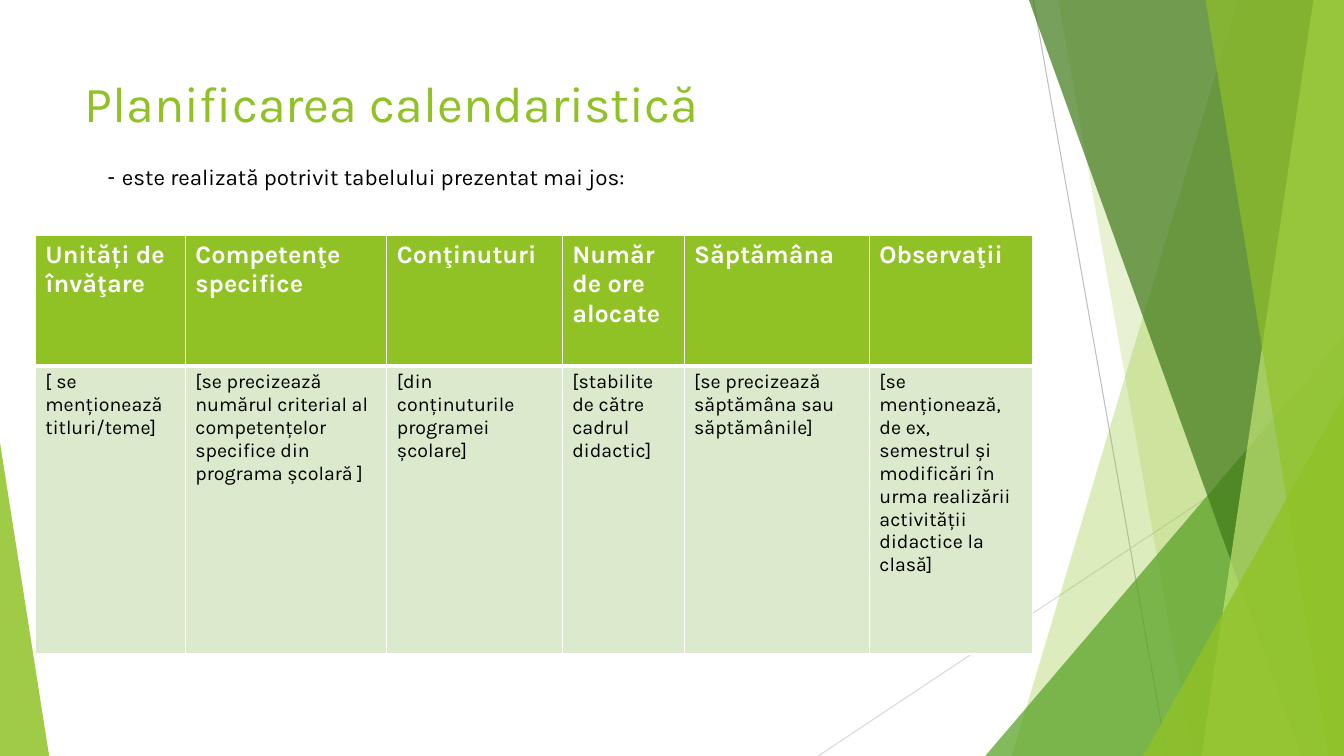
from dataclasses import dataclass

from lxml import etree
from pptx import Presentation
from pptx import util as u
from pptx.dml.color import RGBColor
from pptx.enum import shapes, text
from pptx.oxml import ns


@dataclass(frozen=True)
class Theme:
    """Colours, font and type sizes of the deck."""
    font: str = "Karla"
    lime: str = "90C226"
    pale_lime: str = "C0E474"
    green: str = "54A021"
    forest: str = "3F7819"
    mint: str = "DBE9CD"
    white: str = "FFFFFF"
    black: str = "000000"
    grey: str = "BFBFBF"
    light_grey: str = "D9D9D9"
    title: int = 36
    header: int = 18
    lead: int = 16
    cell: int = 14


@dataclass(frozen=True)
class Box:
    """A region in centimetres."""
    left: float
    top: float
    width: float
    height: float

    def lengths(self):
        """Return the four measures as lengths."""
        return [u.Cm(n) for n in (self.left, self.top, self.width, self.height)]


THEME = Theme()
PAGE = Box(0, 0, 33.87, 19.05)
COLUMNS = [
    (3.78, ["Unități de învăţare"], "[ se menționează titluri/teme]"),
    (5.08, ["Competenţe specifice"],
     "[se precizează numărul criterial al competențelor specifice din programa școlară ]"),
    (4.42, ["Conţinuturi"], "[din conținuturile programei școlare]"),
    (3.07, ["Număr de ore", "alocate"], "[stabilite de către cadrul didactic]"),
    (4.67, ["Săptămâna"], "[se precizează săptămâna sau săptămânile]"),
    (4.11, ["Observaţii"],
     "[se menționează, de ex, semestrul și modificări în urma realizării "
     "activității didactice la clasă]"),
]
ROW_HEIGHTS = (3.3, 7.26)


def add_xml(parent, tag, **attributes):
    """Append a drawing element and return it."""
    return etree.SubElement(parent, ns.qn(tag), attributes)


def style_paragraph(para, size, colour, bold=False):
    """Format every run of a paragraph alike."""
    para.font.name = THEME.font
    para.font.size = u.Pt(size)
    para.font.bold = bold
    para.font.color.rgb = RGBColor.from_string(colour)
    para.alignment = text.PP_ALIGN.LEFT
    para.space_before = u.Pt(0)


def paint(shape, colour, opacity):
    """Give a shape a flat translucent fill."""
    shape.shadow.inherit = False
    shape.line.fill.background()
    shape.fill.solid()
    shape.fill.fore_color.rgb = RGBColor.from_string(colour)
    add_xml(shape.element.xpath(".//a:solidFill/a:srgbClr")[0], "a:alpha",
            val=str(opacity * 1000))


def add_thin_line(page, start, end, colour):
    """Draw a hairline between two points."""
    line = page.shapes.add_connector(
        shapes.MSO_CONNECTOR.STRAIGHT, *(u.Cm(n) for n in (*start, *end)))
    line.line.width = u.Pt(0.75)
    line.line.color.rgb = RGBColor.from_string(colour)
    add_xml(line.element.spPr, "a:effectLst")


def add_band(page, box, top_x, bottom_x, colour, opacity):
    """Fill the area from a slanted edge to the right side of the box."""
    right, bottom = box.left + box.width, box.top + box.height
    corners = [(right, box.top), (right, bottom), (box.left + bottom_x, bottom)]
    builder = page.shapes.build_freeform(u.Cm(box.left + top_x), u.Cm(box.top))
    builder.add_line_segments([(u.Cm(x), u.Cm(y)) for x, y in corners])
    paint(builder.convert_to_shape(), colour, opacity)


def add_corner(page, box, width, height, on_right, colour, opacity):
    """Place a right triangle in a bottom corner of the box."""
    left = box.left + (box.width - width if on_right else 0)
    place = Box(left, box.top + box.height - height, width, height)
    corner = page.shapes.add_shape(
        shapes.MSO_SHAPE.ISOSCELES_TRIANGLE, *place.lengths())
    corner.adjustments[0] = 1 if on_right else 0
    paint(corner, colour, opacity)


def add_facets(page, box):
    """Layer the green facets along the sides of the box."""
    right, bottom = box.left + box.width, box.top + box.height
    add_thin_line(page, (box.left + 26.04, box.top), (box.left + 29.41, bottom), THEME.grey)
    add_thin_line(page, (right, box.top + 10.24), (box.left + 20.62, bottom), THEME.light_grey)
    add_band(page, box, 31.19, 25.5, THEME.lime, 30)
    add_band(page, box, 26.67, 30.05, THEME.lime, 20)
    add_corner(page, box, 9.04, 10.59, True, THEME.green, 72)
    add_band(page, box, 25.93, 32.79, THEME.forest, 70)
    add_band(page, box, 33.1, 30.28, THEME.pale_lime, 70)
    add_band(page, box, 30.38, 33.48, THEME.lime, 65)
    add_corner(page, box, 5.06, 9.07, True, THEME.lime, 80)
    add_corner(page, box, 1.24, 7.9, False, THEME.lime, 85)


def fill_placeholder(holder, box, wording, size, colour):
    """Move a placeholder into the box and return its paragraph."""
    holder.left, holder.top, holder.width, holder.height = box.lengths()
    frame = holder.text_frame
    frame.text = wording
    frame.word_wrap = True
    frame.auto_size = text.MSO_AUTO_SIZE.NONE
    frame.vertical_anchor = text.MSO_ANCHOR.TOP
    style_paragraph(frame.paragraphs[0], size, colour)
    return frame.paragraphs[0]


def add_heading(page, box):
    """Set the title and the dashed lead line below it."""
    title, lead = page.placeholders
    fill_placeholder(title, Box(box.left, box.top, box.width, 2.29),
                     "Planificarea calendaristică", THEME.title, THEME.lime)
    para = fill_placeholder(lead, Box(box.left + 0.58, box.top + 2.29, 22, 1.02),
                            "este realizată potrivit tabelului prezentat mai jos:",
                            THEME.lead, THEME.black)
    properties = para._p.get_or_add_pPr()
    properties.set("marL", str(u.Cm(0.36)))
    properties.set("indent", str(-u.Cm(0.36)))
    bullet = etree.Element(ns.qn("a:buChar"), char="-")
    properties.insert_element_before(bullet, "a:tabLst", "a:defRPr", "a:extLst")


def fill_cell(cell, lines, size, colour, fill, bold, edges):
    """Write a cell with white edges and a flat fill."""
    for side, width in edges.items():
        edge = add_xml(cell._tc.get_or_add_tcPr(), f"a:ln{side}", w=str(u.Pt(width)))
        add_xml(add_xml(edge, "a:solidFill"), "a:srgbClr", val=THEME.white)
    cell.fill.solid()
    cell.fill.fore_color.rgb = RGBColor.from_string(fill)
    cell.text = "\n".join(lines)
    for para in cell.text_frame.paragraphs:
        style_paragraph(para, size, colour, bold)


def add_plan_table(page, box):
    """Lay out the planning table in the box."""
    table = page.shapes.add_table(2, len(COLUMNS), *box.lengths()).table
    for row, height in zip(table.rows, ROW_HEIGHTS):
        row.height = u.Cm(height)
    for index, (width, heading, content) in enumerate(COLUMNS):
        table.columns[index].width = u.Cm(width)
        fill_cell(table.cell(0, index), heading, THEME.header, THEME.white,
                  THEME.lime, True, {"L": 1, "R": 1, "T": 1, "B": 3})
        fill_cell(table.cell(1, index), [content], THEME.cell, THEME.black,
                  THEME.mint, False, {"L": 1, "R": 1, "T": 3, "B": 1})


def main():
    """Build the planning slide and save the deck."""
    deck = Presentation()
    deck.slide_width, deck.slide_height = PAGE.lengths()[2:]
    page = deck.slides.add_slide(deck.slide_layouts[1])
    add_facets(page, PAGE)
    add_heading(page, Box(1.88, 1.7, 23.88, 3.31))
    table_width = sum(width for width, _, _ in COLUMNS)
    add_plan_table(page, Box(0.89, 5.92, table_width, sum(ROW_HEIGHTS)))
    deck.save("out.pptx")


if __name__ == "__main__":
    main()
